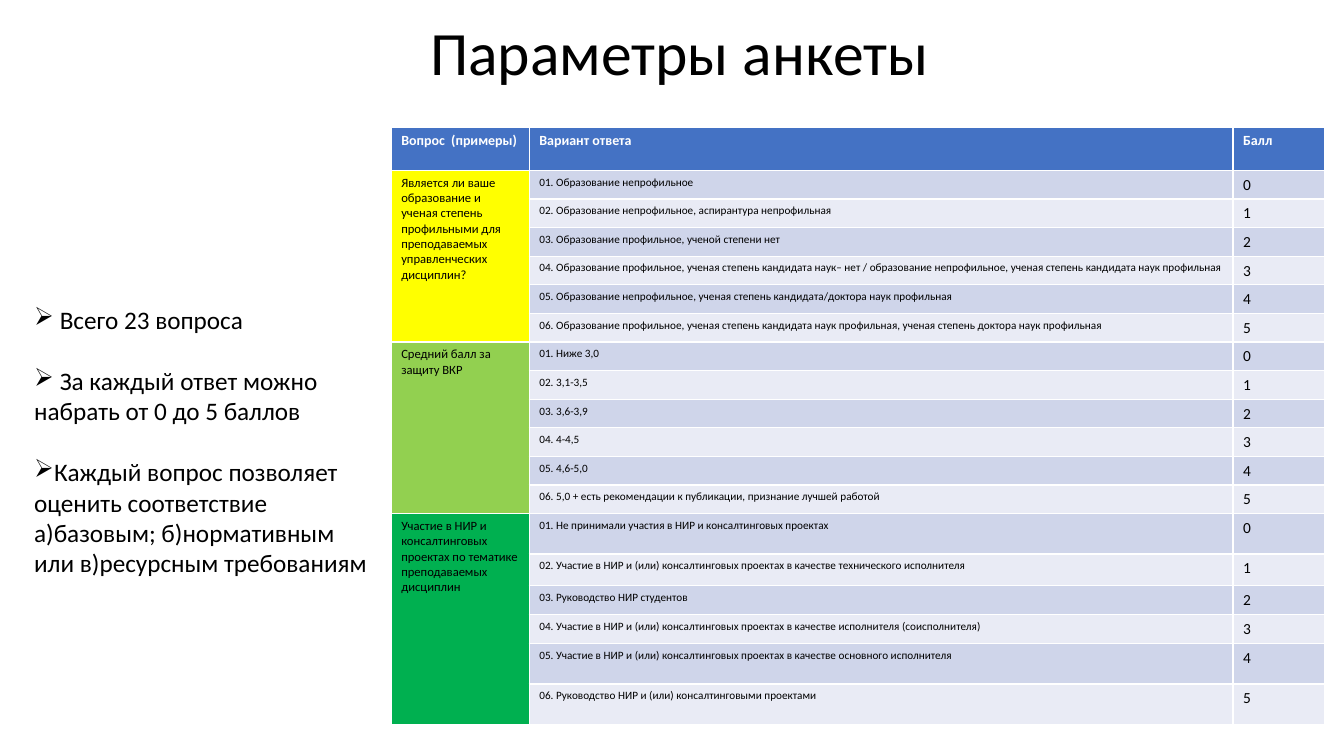
from pptx import Presentation
from pptx.dml.color import RGBColor
from pptx.enum import text as t
from pptx.oxml.ns import qn
from pptx.util import Inches, Pt

THEME = {
    "font": "Calibri", "ink": "000000", "white": "FFFFFF", "head": "4472C4",
    "bands": ("CFD5EA", "E9EBF5"),
    "title": 44, "list": 18, "header": 10, "topic": 9, "answer": 8, "score": 11,
}

TITLE = "Параметры анкеты"
NOTES = [
    " Всего 23 вопроса",
    " За каждый ответ можно набрать от 0 до 5 баллов",
    "Каждый вопрос позволяет оценить соответствие а)базовым; б)нормативным "
    "или в)ресурсным требованиям",
]
HEADS = ["Вопрос  (примеры)", "Вариант ответа", "Балл"]
# Question, fill, answers in order of score
TOPICS = [
    ("Является ли ваше образование и ученая степень профильными для "
     "преподаваемых управленческих дисциплин?", "FFFF00", [
         "Образование непрофильное",
         "Образование непрофильное, аспирантура непрофильная",
         "Образование профильное, ученой степени нет",
         "Образование профильное, ученая степень кандидата наук– нет / "
         "образование непрофильное, ученая степень кандидата наук профильная",
         "Образование непрофильное, ученая степень кандидата/доктора наук "
         "профильная",
         "Образование профильное, ученая степень кандидата наук профильная, "
         "ученая степень доктора наук профильная",
     ]),
    ("Средний балл за защиту ВКР", "92D050", [
        "Ниже 3,0",
        "3,1-3,5",
        "3,6-3,9",
        "4-4,5",
        "4,6-5,0",
        "5,0 + есть рекомендации к публикации, признание лучшей работой",
    ]),
    ("Участие в НИР и консалтинговых проектах по тематике преподаваемых "
     "дисциплин", "00B050", [
         "Не принимали участия в НИР и консалтинговых проектах",
         "Участие в НИР и (или) консалтинговых проектах в качестве "
         "технического исполнителя",
         "Руководство НИР студентов",
         "Участие в НИР и (или) консалтинговых проектах в качестве "
         "исполнителя (соисполнителя)",
         "Участие в НИР и (или) консалтинговых проектах в качестве "
         "основного исполнителя",
         "Руководство НИР и (или) консалтинговыми проектами",
     ]),
]
COLS = [1.37, 6.98, 0.91]
ROWS = [0.43] + [3.4 / 12] * 12 + [0.4, 0.31, 0.29, 0.29, 0.4, 0.4]


def write(par, words, size, color=THEME["ink"], bold=False):
    run = par.add_run()
    run.text = words
    run.font.name = THEME["font"]
    run.font.size = Pt(THEME[size])
    run.font.bold = bold
    run.font.color.rgb = RGBColor.from_string(color)


def box(slide, *place):
    frame = slide.shapes.add_textbox(*map(Inches, place)).text_frame
    frame.word_wrap = True
    return frame


def bullet(par, mark):
    props = par._p.get_or_add_pPr()
    props.set("marL", "0")
    props.set("indent", "0")
    sign = props.makeelement(qn("a:buChar"), {"char": mark})
    props.append(sign)


def fill(cell, back, words, size, **style):
    cell.fill.solid()
    cell.fill.fore_color.rgb = RGBColor.from_string(back)
    write(cell.text_frame.paragraphs[0], words, size, **style)


def heading(slide):
    frame = box(slide, 0.99, 0, 11.5, 1.1)
    frame.vertical_anchor = t.MSO_ANCHOR.MIDDLE
    par = frame.paragraphs[0]
    par.alignment = t.PP_ALIGN.CENTER
    par.line_spacing = 0.9
    write(par, TITLE, "title")


def notes(slide):
    frame = box(slide, 0.24, 2.97, 3.57, 3.43)
    for i, words in enumerate(NOTES):
        par = frame.add_paragraph() if i else frame.paragraphs[0]
        if i:
            par.space_before = Pt(22)
        bullet(par, "➢")
        write(par, words, "list")


def grid(slide):
    frame = slide.shapes.add_table(
        len(ROWS), len(COLS), Inches(3.88), Inches(1.26),
        Inches(sum(COLS)), Inches(sum(ROWS)))
    table = frame.table
    for col, width in zip(table.columns, COLS):
        col.width = Inches(width)
    for row, height in zip(table.rows, ROWS):
        row.height = Inches(height)
    for i, words in enumerate(HEADS):
        fill(table.cell(0, i), THEME["head"], words, "header",
             color=THEME["white"], bold=True)
    top = 1
    for topic, back, answers in TOPICS:
        first = table.cell(top, 0)
        first.merge(table.cell(top + len(answers) - 1, 0))
        fill(first, back, topic, "topic")
        for score, words in enumerate(answers):
            band = THEME["bands"][score % 2]
            fill(table.cell(top + score, 1), band,
                 f"{score + 1:02}. {words}", "answer")
            fill(table.cell(top + score, 2), band, str(score), "score")
        top += len(answers)


def main():
    deck = Presentation()
    deck.slide_width, deck.slide_height = Inches(13.33), Inches(7.5)
    slide = deck.slides.add_slide(deck.slide_layouts[6])
    heading(slide)
    notes(slide)
    grid(slide)
    deck.save("out.pptx")


if __name__ == "__main__":
    main()
